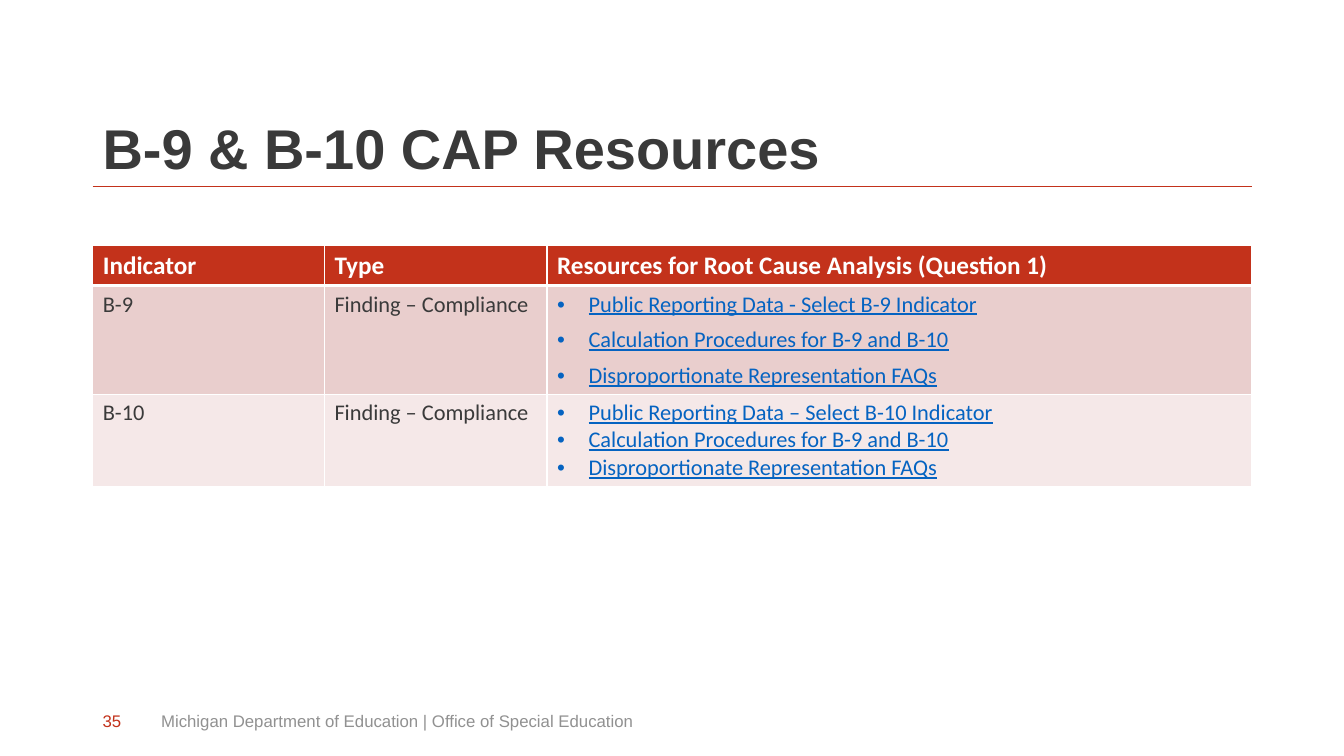
from lxml.etree import SubElement
from pptx import Presentation
from pptx.dml.color import RGBColor
from pptx.enum.shapes import MSO_CONNECTOR
from pptx.enum.text import MSO_ANCHOR
from pptx.oxml.ns import qn
from pptx.util import Pt

RED, DARK, GREY, BLUE, WHITE = "C3321B", "3A3A3A", "919191", "0563C1", "FFFFFF"
LEFT, WIDTH = 66.24, 828
COLUMN_WIDTHS = [165.5, 159, 503.5]
ROW_HEIGHTS = [29, 77.5, 66]
HEADINGS = ["Indicator", "Type", "Resources for Root Cause Analysis (Question 1)"]
SHARED_RESOURCES = ["Calculation Procedures for B-9 and B-10",
                    "Disproportionate Representation FAQs"]
# indicator, first resource, row colour, space after each resource
INDICATORS = [
    ("B-9", "Public Reporting Data - Select B-9 Indicator", "E9CECD", 6),
    ("B-10", "Public Reporting Data – Select B-10 Indicator", "F5E8E8", 0),
]


def color(value):
    return RGBColor.from_string(value)


class SlideBuilder:
    def __init__(self, page):
        self.page = page
        self.heading_font = "Arial"
        self.table_font = "Calibri"

    def span(self, para, text, font, size, fill, bold=False, underline=False):
        span = para.add_run()
        span.text = text
        span.font.name = font
        span.font.size = Pt(size)
        span.font.color.rgb = color(fill)
        span.font.bold = bold
        span.font.underline = underline

    def text(self, left, top, width, height, text, size, fill,
             anchor=MSO_ANCHOR.MIDDLE, bold=False, line_spacing=1.0):
        box = self.page.shapes.add_textbox(Pt(left), Pt(top), Pt(width), Pt(height))
        frame = box.text_frame
        frame.word_wrap = True
        frame.vertical_anchor = anchor
        para = frame.paragraphs[0]
        para.line_spacing = line_spacing
        self.span(para, text, self.heading_font, size, fill, bold)

    def rule(self, left, top, width):
        line = self.page.shapes.add_connector(
            MSO_CONNECTOR.STRAIGHT, Pt(left), Pt(top), Pt(left + width), Pt(top))
        line.line.color.rgb = color(RED)
        line.line.width = Pt(0.5)
        SubElement(line._element.spPr, qn("a:effectLst"))

    def table(self, left, top, column_widths, row_heights):
        frame = self.page.shapes.add_table(
            len(row_heights), len(column_widths), Pt(left), Pt(top),
            Pt(sum(column_widths)), Pt(sum(row_heights)))
        table = frame.table
        for column, width in zip(table.columns, column_widths):
            column.width = Pt(width)
        for row, height in zip(table.rows, row_heights):
            row.height = Pt(height)
        return table

    def borders(self, cell, top, bottom):
        """Draw white cell edges; the sides are 1 point wide."""
        properties = cell._tc.get_or_add_tcPr()
        for index, (side, width) in enumerate(
                [("lnL", 1), ("lnR", 1), ("lnT", top), ("lnB", bottom)]):
            edge = properties.makeelement(qn(f"a:{side}"), {"w": str(Pt(width))})
            fill = SubElement(edge, qn("a:solidFill"))
            SubElement(fill, qn("a:srgbClr"), val=WHITE)
            properties.insert(index, edge)

    def bullet(self, para, indent):
        properties = para._p.get_or_add_pPr()
        properties.set("marL", str(Pt(indent)))
        properties.set("indent", str(-Pt(indent)))
        SubElement(properties, qn("a:buFont"), typeface="Arial")
        SubElement(properties, qn("a:buChar"), char="•")

    def cell(self, cell, lines, fill, size=16, ink=DARK, header=False,
             first_row=False, links=False, space_after=0):
        cell.fill.solid()
        cell.fill.fore_color.rgb = color(fill)
        cell.vertical_anchor = MSO_ANCHOR.MIDDLE if header else MSO_ANCHOR.TOP
        self.borders(cell, 3 if first_row else 1, 3 if header else 1)
        frame = cell.text_frame
        for index, line in enumerate(lines):
            para = frame.add_paragraph() if index else frame.paragraphs[0]
            if links:
                self.bullet(para, 22.5)
                para.space_after = Pt(space_after)
            self.span(para, line, self.table_font, size, ink, header, links)


def main():
    deck = Presentation()
    deck.slide_width, deck.slide_height = Pt(960), Pt(540)
    builder = SlideBuilder(deck.slides.add_slide(deck.slide_layouts[6]))

    builder.rule(LEFT, 133.2, WIDTH)
    builder.text(LEFT, 28.8, WIDTH, 104.4, "B-9 & B-10 CAP Resources", 40, DARK,
                 MSO_ANCHOR.BOTTOM, bold=True, line_spacing=0.9)

    table = builder.table(LEFT, 175, COLUMN_WIDTHS, ROW_HEIGHTS)
    for column, heading in enumerate(HEADINGS):
        builder.cell(table.cell(0, column), [heading], RED, 18, WHITE, header=True)
    for row, (indicator, data_link, fill, gap) in enumerate(INDICATORS, start=1):
        first = row == 1
        for column, label in enumerate([indicator, "Finding – Compliance"]):
            builder.cell(table.cell(row, column), [label], fill, first_row=first)
        builder.cell(table.cell(row, 2), [data_link, *SHARED_RESOURCES], fill,
                     ink=BLUE, first_row=first, links=True, space_after=gap)

    builder.text(108, 500.4, 604, 28.8,
                 "Michigan Department of Education | Office of Special Education",
                 12, GREY)
    builder.text(LEFT, 500.4, 32.4, 28.8, "35", 12, RED)
    deck.save("out.pptx")


if __name__ == "__main__":
    main()
